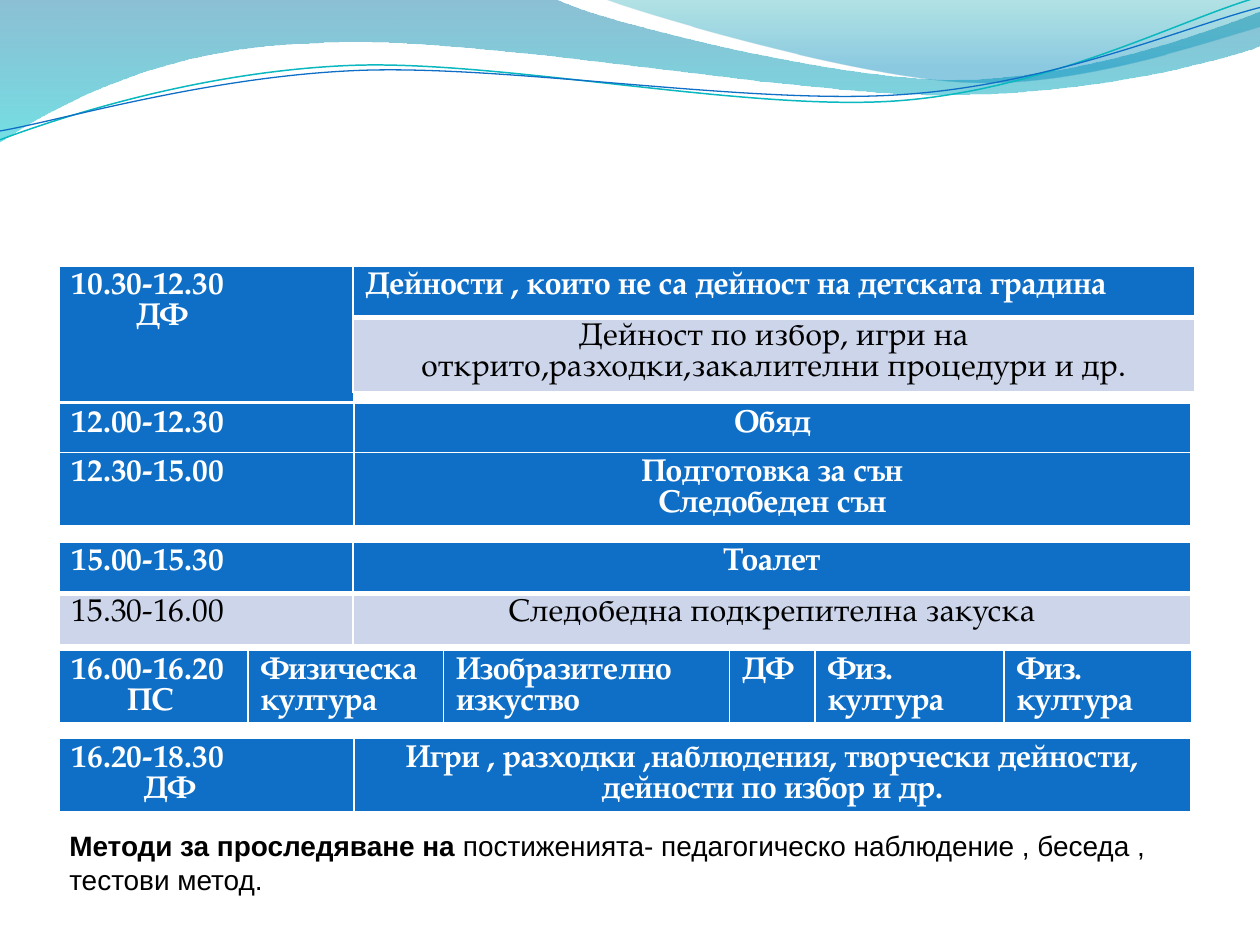
import math
import pptx
import pptx.util
import pptx.dml.color
import pptx.enum.text
import pptx.oxml
import pptx.oxml.ns

Inches, Pt = pptx.util.Inches, pptx.util.Pt
RGB = pptx.dml.color.RGBColor.from_string
ALIGN = pptx.enum.text.PP_ALIGN
qn = pptx.oxml.ns.qn
NS = pptx.oxml.ns.nsdecls("a")

COLORS = {"blue": "0F6FC6", "pale": "CCD5EA", "white": "FFFFFF", "black": "000000", "teal": "0AB8BF"}
TABLE_FONT = "TeX Gyre Pagella"
LEFT, ROW = 0.47, 0.41
TILT = 357.3

TITLE = [
    ("Методи за проследяване на ", True),
    ("постиженията- педагогическо наблюдение , беседа , тестови метод.", False),
]

# left, top, frame height, row height, column widths, rows, columns set centred, indent of second line
TABLES = [
    (LEFT, 2.11, 1.09, 1.09, [2.34], [["10.30-12.30\vДФ"]], [], 0.51),
    (2.8, 2.11, 1.11, ROW, [6.68],
     [["Дейности , които не са дейност на детската градина"],
      ["Дейност по избор, игри на открито,разходки,закалителни процедури и др."]], [(1, 0)], 0),
    (LEFT, 3.2, ROW, ROW, [2.34, 6.64], [["12.00-12.30", "Обяд"]], [(0, 1)], 0),
    (LEFT, 3.59, 0.7, ROW, [2.34, 6.64],
     [["12.30-15.00", "Подготовка за сън\vСледобеден сън"]], [(0, 1)], 0),
    (LEFT, 4.3, 0.81, ROW, [2.33, 6.65],
     [["15.00-15.30", "Тоалет"],
      ["15.30-16.00", "Следобедна подкрепителна закуска"]], [(0, 1), (1, 1)], 0),
    (LEFT, 5.16, 0.7, ROW, [1.5, 1.55, 2.27, 0.68, 1.5, 1.49],
     [["16.00-16.20\vПС", "Физическа\vкултура", "Изобразително изкуство", "ДФ",
       "Физ. култура", "Физ. култура"]], [], 0.44),
    (LEFT, 5.86, 0.7, ROW, [2.34, 6.64],
     [["16.20-18.30\vДФ",
       "Игри , разходки ,наблюдения, творчески дейности, дейности по избор и др."]], [(0, 1)], 0.57),
]

WAVES = [
    ([(0, 0), (4.4, -0.01), (4.76, 0.17, 6.64, 0.63, 7.58, 0.63), (8.53, 0.63, 9.58, 0.26, 10, 0.09),
      (10.01, 0.36), (9.83, 0.44, 8.7, 0.76, 7.46, 0.75), (6.22, 0.75, 3.82, 0.28, 2.57, 0.34),
      (1.29, 0.36, 0.46, 0.83, -0.01, 1.13), (0, 0)],
     [(0, "0074A1", 45), (100, "00C6CF", 55)]),
    ([(4.79, -0.01), (5.09, 0.11, 6.82, 0.62, 7.69, 0.65), (8.56, 0.69, 9.61, 0.32, 10, 0.21),
      (10, 0), (4.79, -0.01)],
     [(0, "00A1A9", 30), (80, "008BBF", 45)]),
]
LINES = [
    ([(0, 1.11), (0.48, 0.93, 1.58, 0.57, 2.77, 0.52), (3.95, 0.47, 5.93, 0.89, 7.13, 0.8),
      (8.33, 0.71, 9.38, 0.15, 9.98, -0.02)], "teal", 0.85),
    ([(0, 1.04), (0.47, 0.96, 1.64, 0.61, 2.83, 0.56), (4.03, 0.51, 5.97, 0.84, 7.17, 0.75),
      (8.36, 0.67, 9.41, 0.21, 10, 0.06)], "blue", 0.75),
]


def turn(x, y, degrees):
    a = math.radians(degrees)
    return x * math.cos(a) - y * math.sin(a), x * math.sin(a) + y * math.cos(a)


def add_curve(s, segments, close):
    anchors = [(Inches(seg[-2]), Inches(seg[-1])) for seg in segments]
    builder = s.shapes.build_freeform(*anchors[0])
    builder.add_line_segments(anchors[1:-1] if close else anchors[1:], close=close)
    sp = builder.convert_to_shape()
    for seg, node in zip(segments[1:], list(sp.element.iter(qn("a:lnTo")))):
        if len(seg) == 6:
            pts = "".join(
                f'<a:pt x="{Inches(x) - sp.left}" y="{Inches(y) - sp.top}"/>'
                for x, y in zip(seg[::2], seg[1::2]))
            node.getparent().replace(
                node, pptx.oxml.parse_xml(f"<a:cubicBezTo {NS}>{pts}</a:cubicBezTo>"))
    sp.shadow.inherit = False
    sp.fill.background()
    sp.line.fill.background()
    return sp


def add_wave(s, segments, stops):
    sp = add_curve(s, segments, True)
    gs = "".join(
        f'<a:gs pos="{pos * 1000}"><a:srgbClr val="{color}"><a:alpha val="{alpha * 1000}"/></a:srgbClr></a:gs>'
        for pos, color, alpha in stops)
    grad = pptx.oxml.parse_xml(
        f'<a:gradFill {NS} rotWithShape="1"><a:gsLst>{gs}</a:gsLst>'
        '<a:lin ang="5400000" scaled="0"/></a:gradFill>')
    props = sp.element.spPr
    props.replace(props.find(qn("a:noFill")), grad)


def add_line(s, segments, color, width):
    level = [sum((turn(x, y, -TILT) for x, y in zip(seg[::2], seg[1::2])), ()) for seg in segments]
    sp = add_curve(s, level, False)
    x, y = turn(sp.left + sp.width / 2, sp.top + sp.height / 2, TILT)
    sp.left, sp.top = round(x - sp.width / 2), round(y - sp.height / 2)
    sp.rotation = TILT
    sp.line.color.rgb = RGB(COLORS[color])
    sp.line.width = Pt(width)


def fill_cell(cell, text, header, centred, indent):
    cell.fill.solid()
    cell.fill.fore_color.rgb = RGB(COLORS["blue" if header else "pale"])
    widths = {"L": 1, "R": 1, "T": 1 if header else 3, "B": 3 if header else 1}
    for i, (side, width) in enumerate(widths.items()):
        cell._tc.get_or_add_tcPr().insert(i, pptx.oxml.parse_xml(
            f'<a:ln{side} {NS} w="{Pt(width)}"><a:solidFill><a:srgbClr val="{COLORS["white"]}"/>'
            f"</a:solidFill></a:ln{side}>"))
    p = cell.text_frame.paragraphs[0]
    p.text = text
    p.alignment = ALIGN.CENTER if centred else ALIGN.LEFT
    p.line_spacing = Pt(17.7)
    p.font.name = TABLE_FONT
    p.font.size = Pt(18)
    p.font.bold = header
    p.font.color.rgb = RGB(COLORS["white" if header else "black"])
    if indent:
        props = p._p.get_or_add_pPr()
        props.set("marL", str(Inches(indent)))
        props.set("indent", str(-Inches(indent)))


def add_schedule(s, left, top, height, row_height, widths, rows, centred, indent):
    frame = s.shapes.add_table(
        len(rows), len(widths), Inches(left), Inches(top), Inches(sum(widths)), Inches(height))
    table = frame.table
    for column, width in zip(table.columns, widths):
        column.width = Inches(width)
    for r, row in enumerate(rows):
        table.rows[r].height = Inches(row_height)
        for c, text in enumerate(row):
            fill_cell(table.cell(r, c), text, r == 0, (r, c) in centred, 0 if c else indent)
    frame.height = Inches(height)


def set_title(s):
    sp = s.shapes.title
    sp.left, sp.top, sp.width, sp.height = map(Inches, (0.55, 6.64, 9, 0.47))
    tf = sp.text_frame
    tf.word_wrap = True
    tf.auto_size = pptx.enum.text.MSO_AUTO_SIZE.NONE
    tf.vertical_anchor = pptx.enum.text.MSO_ANCHOR.BOTTOM
    tf.margin_left = tf.margin_right = tf.margin_bottom = 0
    tf.margin_top = Inches(0.05)
    p = tf.paragraphs[0]
    p.alignment = ALIGN.LEFT
    p.font.name = "Arial"
    p.font.size = Pt(16)
    p.font.color.rgb = RGB(COLORS["black"])
    for text, bold in TITLE:
        r = p.add_run()
        r.text = text
        r.font.bold = bold


def main():
    prs = pptx.Presentation()
    prs.slide_width, prs.slide_height = Inches(10), Inches(7.5)
    s = prs.slides.add_slide(prs.slide_layouts[5])
    for wave in WAVES:
        add_wave(s, *wave)
    for line in LINES:
        add_line(s, *line)
    set_title(s)
    for schedule in TABLES:
        add_schedule(s, *schedule)
    prs.save("out.pptx")


if __name__ == "__main__":
    main()
